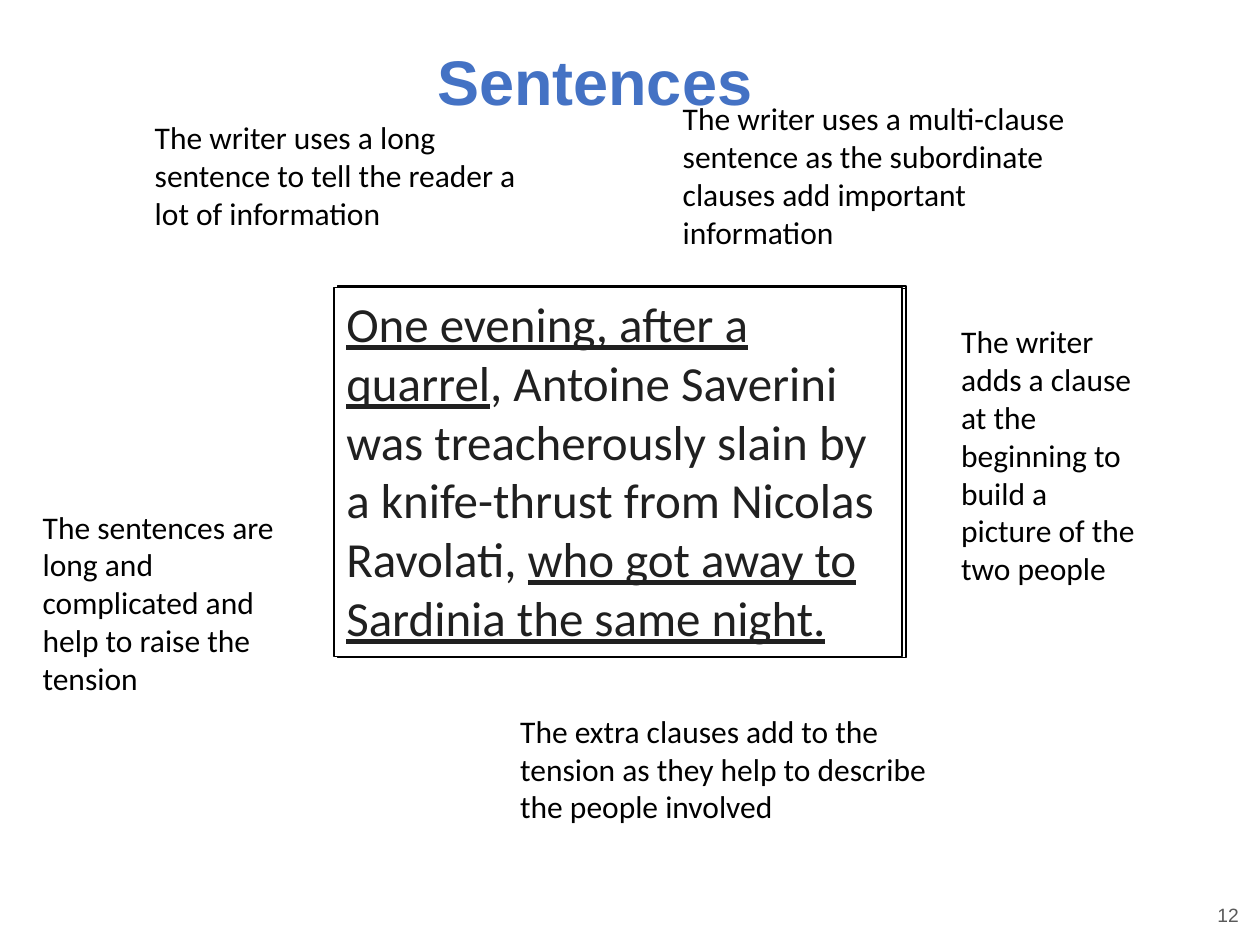
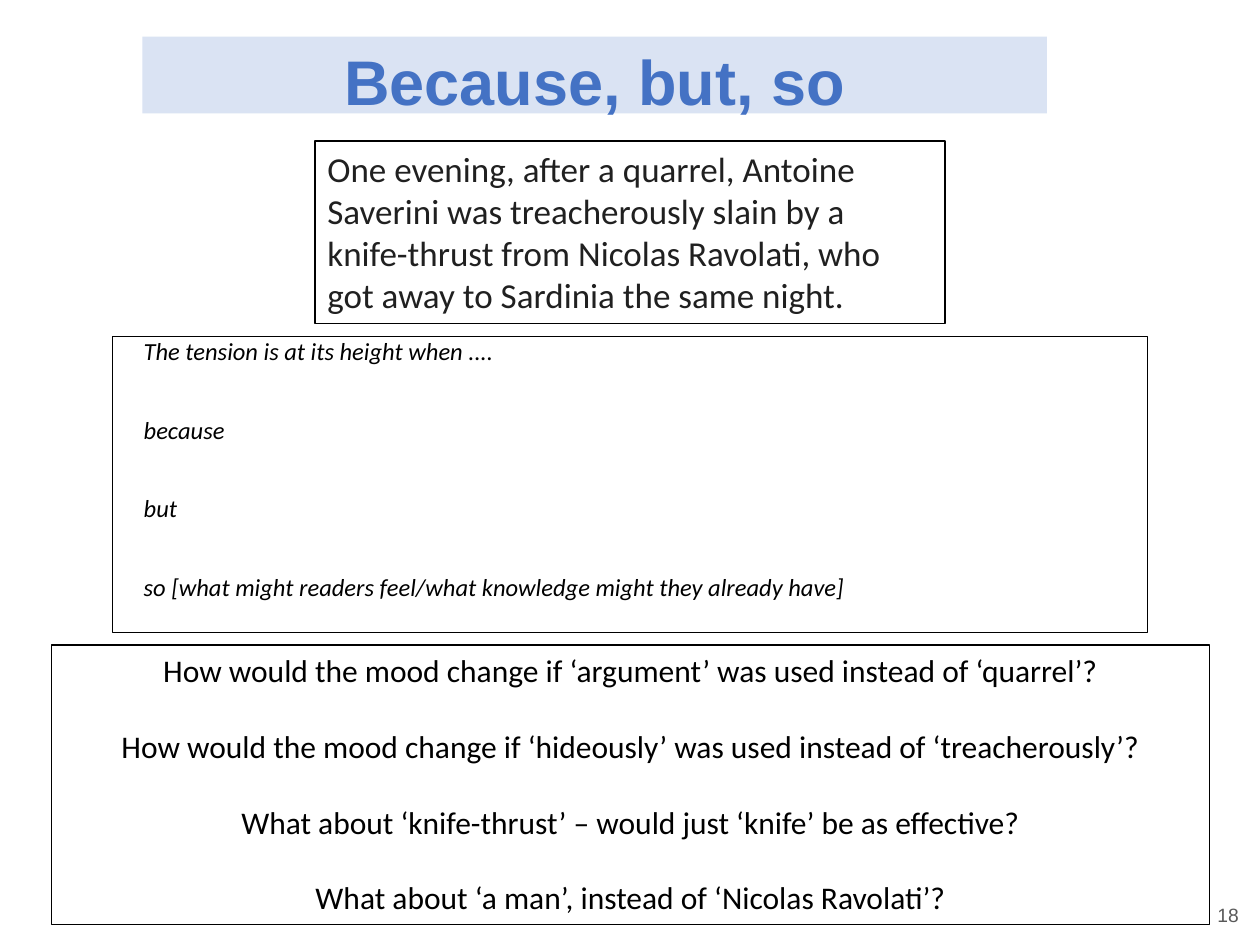
import pptx
import pptx.util
import pptx.dml.color
import pptx.enum.shapes
import pptx.enum.text

Inches = pptx.util.Inches
Pt = pptx.util.Pt
RGBColor = pptx.dml.color.RGBColor
ALIGN = pptx.enum.text.PP_ALIGN

BLACK = RGBColor(0x00, 0x00, 0x00)
WHITE = RGBColor(0xFF, 0xFF, 0xFF)
INK = RGBColor(0x20, 0x20, 0x20)
GREY = RGBColor(0x59, 0x59, 0x59)
BLUE = RGBColor(0x44, 0x72, 0xC4)
PALE_BLUE = RGBColor(0xDA, 0xE3, 0xF3)

TITLE_FONT = {"name": "Arial", "size": Pt(36), "bold": True}
NUMBER_FONT = {"name": "Arial", "size": Pt(11)}
NOTE_FONT = {"name": "Calibri", "size": Pt(18)}
PROMPT_FONT = {"name": "Calibri", "size": Pt(14), "italic": True}
LARGE_QUOTE_FONT = {"name": "Calibri", "size": Pt(28)}
QUOTE_FONT = {"name": "Calibri", "size": Pt(20)}

QUOTE_SPANS = [
    ("One evening, after a quarrel", True),
    (", Antoine Saverini was treacherously slain by a knife-thrust from Nicolas Ravolati, ", False),
    ("who got away to Sardinia the same night.", True),
]
QUOTE = "".join(text for text, underlined in QUOTE_SPANS)

NOTES = [
    ((1.13, 0.89, 3.07, 1.01), "The writer uses a long sentence to tell the reader a lot of information"),
    ((5.32, 0.74, 3.55, 1.31), "The writer uses a multi-clause sentence as the subordinate clauses "
                               "add important information"),
    ((0.24, 3.98, 2.31, 1.62), "The sentences are long and complicated and help to raise the tension"),
    ((7.53, 2.51, 1.58, 2.52), "The writer adds a clause at the beginning to build a picture of the two people"),
    ((4.03, 5.6, 3.68, 1.01), "The extra clauses add to the tension as they help to describe the people involved"),
]
PROMPTS = [
    "The tension is at its height when ....",
    "because",
    "but",
    "so [what might readers feel/what knowledge might they already have]",
]
QUESTIONS = [
    "How would the mood change if ‘argument’ was used instead of ‘quarrel’?",
    "How would the mood change if ‘hideously’ was used instead of ‘treacherously’?",
    "What about ‘knife-thrust’ – would just ‘knife’ be as effective?",
    "What about ‘a man’, instead of ‘Nicolas Ravolati’?",
]


def add_span(para, text, font, color, underline=False):
    span = para.add_run()
    span.text = text
    for name, value in font.items():
        setattr(span.font, name, value)
    span.font.color.rgb = color
    if underline:
        span.font.underline = True


def prepare_frame(box, margins):
    frame = box.text_frame
    frame.word_wrap = True
    frame.vertical_anchor = pptx.enum.text.MSO_ANCHOR.TOP
    for side, margin in zip(("left", "top", "right", "bottom"), margins):
        setattr(frame, "margin_" + side, Inches(margin))


def write(box, lines, font, color, align=ALIGN.LEFT, gap=0, margins=(0.1, 0.05, 0.1, 0.05)):
    prepare_frame(box, margins)
    frame = box.text_frame
    for index, line in enumerate(lines):
        para = frame.add_paragraph() if index else frame.paragraphs[0]
        para.alignment = align
        if index and gap:
            para.space_before = Pt(gap)
        spans = [(line, False)] if isinstance(line, str) else line
        for text, underlined in spans:
            add_span(para, text, font, color, underlined)


def add_text(page, place, lines, font, color, **options):
    box = page.shapes.add_textbox(*map(Inches, place))
    write(box, lines, font, color, **options)
    return box


def add_frame(page, place, fill=None):
    box = page.shapes.add_shape(pptx.enum.shapes.MSO_SHAPE.RECTANGLE, *map(Inches, place))
    box.shadow.inherit = False
    if fill is None:
        box.fill.background()
    else:
        box.fill.solid()
        box.fill.fore_color.rgb = fill
    box.line.color.rgb = BLACK
    box.line.width = Pt(0.75)
    return box


def add_page(deck, title, number, band=None):
    page = deck.slides.add_slide(deck.slide_layouts[6])
    add_text(page, (9.52, 7.12, 0.41, 0.29), [number], NUMBER_FONT, GREY, align=ALIGN.RIGHT)
    heading = add_text(page, (1.13, 0.29, 7.18, 0.61), [title], TITLE_FONT, BLUE,
                       align=ALIGN.CENTER, margins=(0, 0.05, 0, 0))
    if band is not None:
        heading.fill.solid()
        heading.fill.fore_color.rgb = band
    return page


def build_sentences(deck):
    page = add_page(deck, "Sentences", "12")
    for left, top in ((2.68, 2.27), (2.68, 2.29), (2.65, 2.28)):
        quote_box = add_frame(page, (left, top, 4.51, 2.93), WHITE)
    write(quote_box, [QUOTE_SPANS], LARGE_QUOTE_FONT, INK)
    for place, note in NOTES:
        add_text(page, place, [note], NOTE_FONT, BLACK)


def build_because_but_so(deck):
    page = add_page(deck, "Because, but, so", "18", PALE_BLUE)
    prompt_box = add_frame(page, (0.89, 2.67, 8.22, 2.35))
    write(prompt_box, PROMPTS, PROMPT_FONT, BLACK, gap=28, margins=(0.25, 0, 0, 0))
    quote_box = add_frame(page, (2.5, 1.12, 5, 1.45))
    write(quote_box, [QUOTE], QUOTE_FONT, INK)
    question_box = add_frame(page, (0.41, 5.12, 9.19, 2.22))
    write(question_box, QUESTIONS, NOTE_FONT, BLACK, align=ALIGN.CENTER, gap=21.6)


def main():
    deck = pptx.Presentation()
    deck.slide_width = Inches(10)
    deck.slide_height = Inches(7.5)
    build_sentences(deck)
    build_because_but_so(deck)
    deck.save("out.pptx")


if __name__ == "__main__":
    main()
